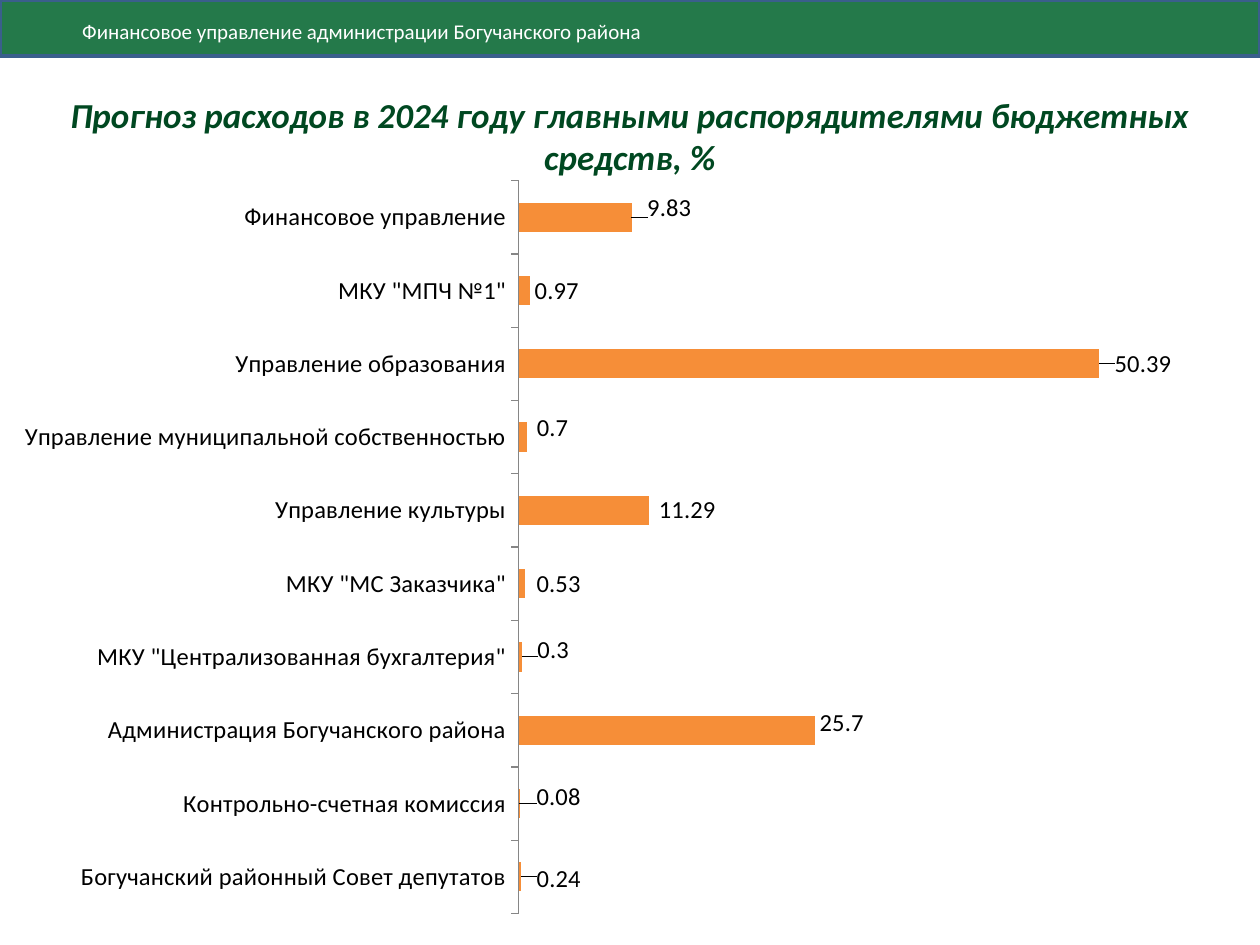
from dataclasses import dataclass

from lxml.etree import SubElement
from pptx import Presentation
from pptx.chart.data import CategoryChartData
from pptx.dml.color import RGBColor
from pptx.enum.chart import XL_CHART_TYPE, XL_LABEL_POSITION, XL_TICK_MARK
from pptx.enum.shapes import MSO_SHAPE
from pptx.enum.text import MSO_ANCHOR, PP_ALIGN
from pptx.oxml import parse_xml
from pptx.oxml.ns import nsdecls, qn
from pptx.util import Pt


@dataclass(frozen=True)
class Theme:
    font: str = "Calibri"
    band: str = "00642D"
    band_line: str = "3A5F8C"
    band_text: str = "FFFFFF"
    title: str = "004821"
    bar: str = "F68E38"
    axis: str = "868686"
    text: str = "000000"
    band_size: int = 12
    title_size: int = 20
    chart_size: int = 14


# Category, percent, label shift right and down in points
SPENDING = [
    ("Богучанский районный Совет депутатов", 0.24, 6, 1),
    ("Контрольно-счетная комиссия", 0.08, 7, -4),
    ("Администрация Богучанского района", 25.7, 0, -4),
    ('МКУ "Централизованная бухгалтерия"', 0.3, 6, -4),
    ('МКУ "МС Заказчика"', 0.53, 4, 0),
    ("Управление культуры", 11.29, 3, 0),
    ("Управление муниципальной собственностью", 0.7, 3, -5),
    ("Управление образования", 50.39, 6, 0),
    ('МКУ "МПЧ №1"', 0.97, 0, 0),
    ("Финансовое управление", 9.83, 6, -5),
]


def layout_xml(inner=False, **values):
    target = '<c:layoutTarget val="inner"/>' if inner else ""
    modes = '<c:xMode val="edge"/><c:yMode val="edge"/>' if inner else ""
    places = "".join(f'<c:{key} val="{value:.4f}"/>' for key, value in values.items())
    return parse_xml(f"<c:layout {nsdecls('c')}><c:manualLayout>{target}{modes}"
                     f"{places}</c:manualLayout></c:layout>")


class SlideBuilder:
    def __init__(self, slide, theme):
        self.slide = slide
        self.theme = theme

    def style(self, font, size, color, strong=False):
        font.name = self.theme.font
        font.size = Pt(size)
        font.color.rgb = RGBColor.from_string(color)
        font.bold = font.italic = strong

    def add_text(self, frame, text, size, color, align, strong=False):
        frame.word_wrap = True
        frame.vertical_anchor = MSO_ANCHOR.MIDDLE
        para = frame.paragraphs[0]
        para.alignment = align
        span = para.add_run()
        span.text = text
        self.style(span.font, size, color, strong)

    def band(self, text, left, top, width, height):
        band = self.slide.shapes.add_shape(
            MSO_SHAPE.RECTANGLE, Pt(left), Pt(top), Pt(width), Pt(height))
        band.shadow.inherit = False
        band.fill.solid()
        band.fill.fore_color.rgb = RGBColor.from_string(self.theme.band)
        color = band.element.spPr.find(qn("a:solidFill")).find(qn("a:srgbClr"))
        SubElement(color, qn("a:alpha")).set("val", "86000")
        band.line.color.rgb = RGBColor.from_string(self.theme.band_line)
        band.line.width = Pt(2)
        frame = band.text_frame
        frame.margin_left, frame.margin_top = Pt(47), Pt(7.6)
        self.add_text(frame, text, self.theme.band_size, self.theme.band_text, PP_ALIGN.LEFT)

    def title(self, text, left, top, width, height):
        box = self.slide.shapes.add_textbox(Pt(left), Pt(top), Pt(width), Pt(height))
        self.add_text(box.text_frame, text, self.theme.title_size, self.theme.title,
                      PP_ALIGN.CENTER, strong=True)

    def bar_chart(self, rows, left, top, width, height):
        theme = self.theme
        data = CategoryChartData()
        data.categories = [row[0] for row in rows]
        data.add_series("Series 1", [row[1] for row in rows])
        chart = self.slide.shapes.add_chart(
            XL_CHART_TYPE.BAR_CLUSTERED, Pt(left), Pt(top), Pt(width), Pt(height), data).chart
        chart.has_legend = chart.has_title = False
        self.style(chart.font, theme.chart_size, theme.text)

        # Axes
        names = chart.category_axis
        names.major_tick_mark = XL_TICK_MARK.OUTSIDE
        names.format.line.color.rgb = RGBColor.from_string(theme.axis)
        self.style(names.tick_labels.font, theme.chart_size, theme.text)
        scale = chart.value_axis
        scale.minimum_scale, scale.maximum_scale = 0, 60
        scale.has_major_gridlines = False
        scale.visible = False

        # Bars
        plot = chart.plots[0]
        plot.gap_width = 150
        plot.vary_by_categories = False
        series = plot.series[0]
        series.format.fill.solid()
        series.format.fill.fore_color.rgb = RGBColor.from_string(theme.bar)

        # Value labels
        for index in range(len(rows)):
            label = series.points[index].data_label
            self.style(label.font, theme.chart_size, theme.text)
            label.position = XL_LABEL_POSITION.OUTSIDE_END
        for node, (_, _, right, down) in zip(chart.element.xpath(".//c:dLbl"), rows):
            node.find(qn("c:idx")).addnext(layout_xml(x=right / width, y=down / height))

        # Plot position
        area = chart.element.xpath(".//c:plotArea")[0]
        for old in area.findall(qn("c:layout")):
            area.remove(old)
        area.insert(0, layout_xml(inner=True, x=0.42, y=0.02, w=0.56, h=0.96))


def main():
    deck = Presentation()
    deck.slide_width, deck.slide_height = Pt(720), Pt(540)
    page = SlideBuilder(deck.slides.add_slide(deck.slide_layouts[6]), Theme())
    page.band("Финансовое управление администрации Богучанского района", 0, 0, 720, 32)
    page.title("Прогноз расходов в 2024 году главными распорядителями бюджетных средств, %",
               0, 49, 720, 57)
    page.bar_chart(SPENDING, 0, 94.5, 705.6, 436.3)
    deck.save("out.pptx")


if __name__ == "__main__":
    main()
